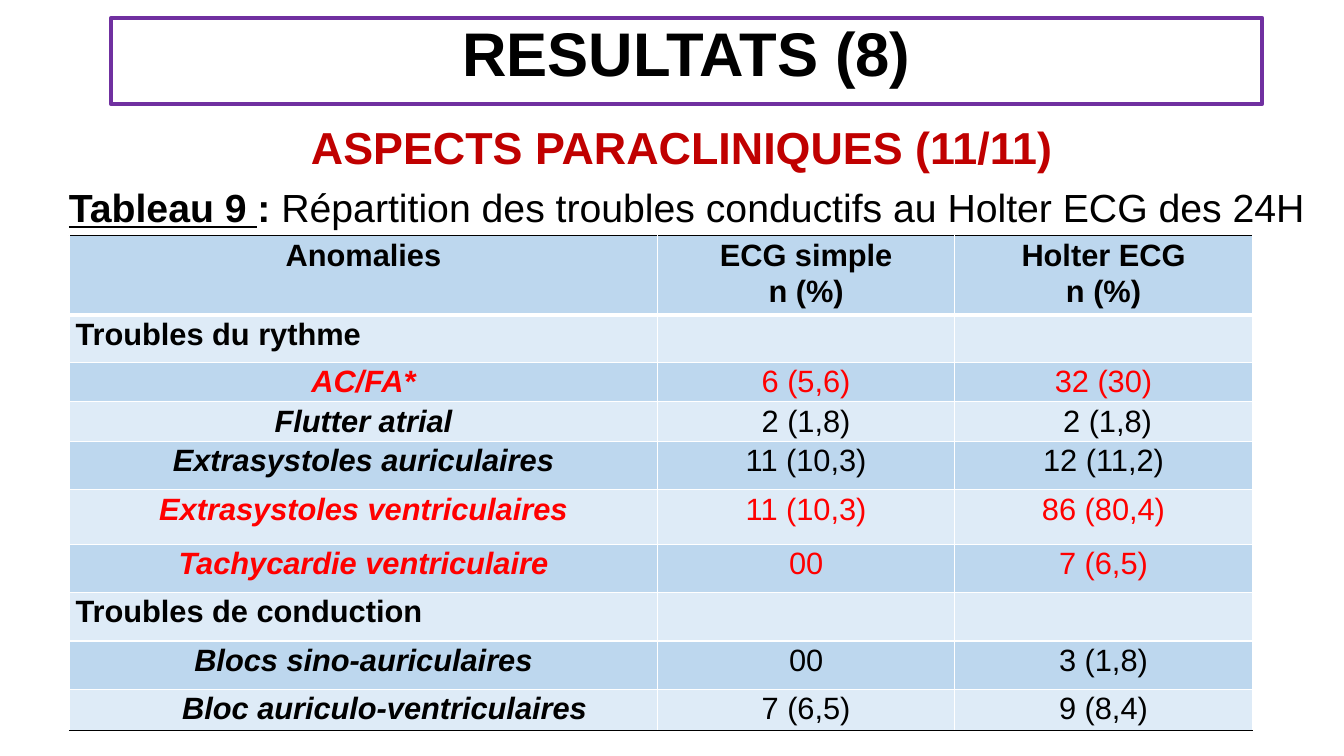
from lxml.etree import SubElement
from pptx import Presentation
from pptx.dml.color import RGBColor
from pptx.enum.shapes import MSO_SHAPE as Shape
from pptx.enum.text import MSO_ANCHOR as Anchor, PP_ALIGN as Align
from pptx.oxml.ns import qn
from pptx.util import Inches, Pt

BLACK = RGBColor(0x00, 0x00, 0x00)
WHITE = RGBColor(0xFF, 0xFF, 0xFF)
RED = RGBColor(0xFF, 0x00, 0x00)
DARK_RED = RGBColor(0xC0, 0x00, 0x00)
PURPLE = RGBColor(0x70, 0x30, 0xA0)
BLUE = RGBColor(0xBD, 0xD7, 0xEE)
PALE = RGBColor(0xDE, 0xEB, 0xF7)

COLS = [5.83, 2.95, 2.95]
HEIGHTS = [0.58, 0.47, 0.39, 0.39, 0.48, 0.54, 0.48, 0.48, 0.48, 0.41]
ROWS = [
    ("Anomalies", "ECG simple\nn (%)", "Holter ECG\nn (%)"),
    ("Troubles du rythme", "", ""),
    ("AC/FA*", "6 (5,6)", "32 (30)"),
    ("Flutter atrial", "2 (1,8)", "2 (1,8)"),
    ("Extrasystoles auriculaires", "11 (10,3)", "12 (11,2)"),
    ("Extrasystoles ventriculaires", "11 (10,3)", "86 (80,4)"),
    ("Tachycardie ventriculaire", "00", "7 (6,5)"),
    ("Troubles de conduction", "", ""),
    ("Blocs sino-auriculaires", "00", "3 (1,8)"),
    ("Bloc auriculo-ventriculaires", "7 (6,5)", "9 (8,4)"),
]
GROUPS = {1, 7}
RED_ROWS = {2, 5, 6}
SHIFTS = {(3, 2): 0.08, (9, 0): 0.42}


def style(run, size, color=BLACK, bold=False, italic=False, under=False):
    font = run.font
    font.name = "Arial"
    font.size = Pt(size)
    font.color.rgb = color
    font.bold = bold
    font.italic = italic
    font.underline = under


def add_box(slide, left, top, width, height, anchor=Anchor.TOP):
    box = slide.shapes.add_textbox(Inches(left), Inches(top), Inches(width), Inches(height))
    frame = box.text_frame
    frame.word_wrap = True
    frame.vertical_anchor = anchor
    para = frame.paragraphs[0]
    para.alignment = Align.CENTER
    return para


def add_title(slide):
    box = slide.shapes.add_shape(
        Shape.RECTANGLE, Inches(1.1), Inches(0.18), Inches(11.42), Inches(0.85))
    box.shadow.inherit = False
    box.fill.background()
    box.line.color.rgb = PURPLE
    box.line.width = Pt(3)
    frame = box.text_frame
    frame.text = "RESULTATS (8)"
    frame.vertical_anchor = Anchor.TOP
    para = frame.paragraphs[0]
    para.alignment = Align.CENTER
    para.line_spacing = 0.9
    style(para.runs[0], 44, bold=True)


def add_heading(slide):
    para = add_box(slide, 1.53, 1.13, 10.47, 0.64, Anchor.MIDDLE)
    para.text = "ASPECTS PARACLINIQUES (11/11)"
    style(para.runs[0], 32, DARK_RED, bold=True)


def add_caption(slide):
    para = add_box(slide, 0.13, 1.77, 13.36, 0.57)
    parts = [
        ("Tableau 9 ", True, True),
        (": ", True, False),
        ("Répartition des troubles conductifs au Holter ECG des 24H", False, False),
    ]
    for text, bold, under in parts:
        run = para.add_run()
        run.text = text
        style(run, 28, bold=bold, under=under)


def add_edge(cell, side, color, width):
    line = SubElement(cell._tc.get_or_add_tcPr(), qn("a:ln" + side), w=str(Pt(width)))
    fill = SubElement(line, qn("a:solidFill"))
    SubElement(fill, qn("a:srgbClr"), val=str(color))


def set_edges(cell, row):
    last = len(ROWS) - 1
    top = {0: (BLACK, 1), 1: (WHITE, 3)}.get(row, (WHITE, 1))
    base = {0: (WHITE, 3), last: (BLACK, 1)}.get(row, (WHITE, 1))
    edges = {"L": (WHITE, 1), "R": (WHITE, 1), "T": top, "B": base}
    for side, (color, width) in edges.items():
        add_edge(cell, side, color, width)


def fill_cell(cell, row, col, text):
    cell.margin_left = Inches(0.06 + SHIFTS.get((row, col), 0))
    cell.margin_right = Inches(0.06)
    cell.margin_top = cell.margin_bottom = Inches(0)
    set_edges(cell, row)
    cell.fill.solid()
    cell.fill.fore_color.rgb = PALE if row % 2 else BLUE
    cell.text_frame.text = text
    color = RED if row in RED_ROWS else BLACK
    bold = row == 0 or col == 0
    italic = col == 0 and row > 0 and row not in GROUPS
    for para in cell.text_frame.paragraphs:
        para.alignment = Align.LEFT if row in GROUPS else Align.CENTER
        para.line_spacing = 1.07
        for run in para.runs:
            style(run, 22, color, bold, italic)


def add_grid(slide):
    frame = slide.shapes.add_table(
        len(ROWS), len(COLS), Inches(0.69), Inches(2.34),
        Inches(sum(COLS)), Inches(sum(HEIGHTS)))
    table = frame.table
    table.first_row = table.horz_banding = False
    for col, width in enumerate(COLS):
        table.columns[col].width = Inches(width)
    for row, (height, texts) in enumerate(zip(HEIGHTS, ROWS)):
        table.rows[row].height = Inches(height)
        for col, text in enumerate(texts):
            fill_cell(table.cell(row, col), row, col, text)


def main():
    deck = Presentation()
    deck.slide_width = Inches(13.33)
    deck.slide_height = Inches(7.5)
    slide = deck.slides.add_slide(deck.slide_layouts[6])
    add_caption(slide)
    add_title(slide)
    add_grid(slide)
    add_heading(slide)
    deck.save("out.pptx")


if __name__ == "__main__":
    main()
